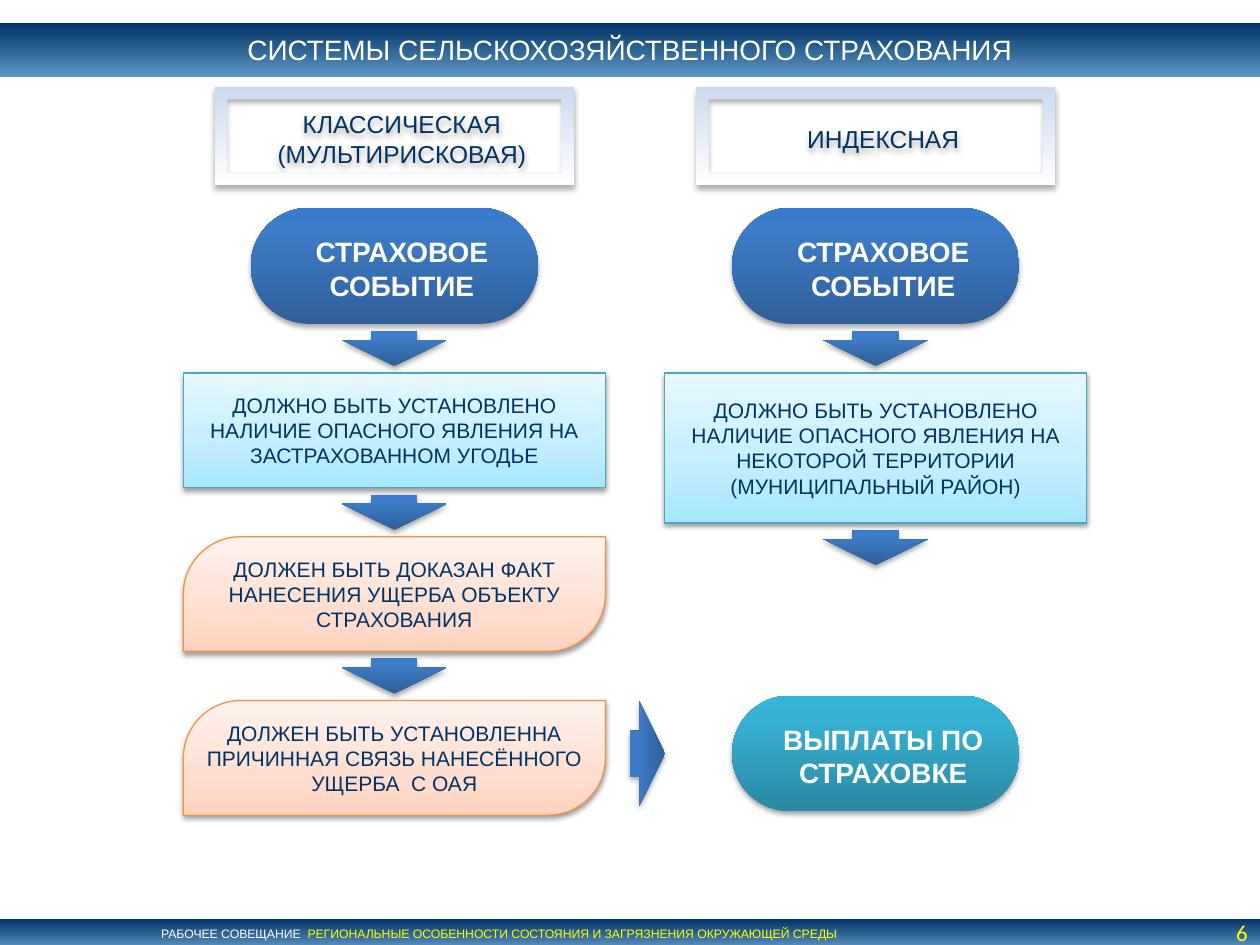
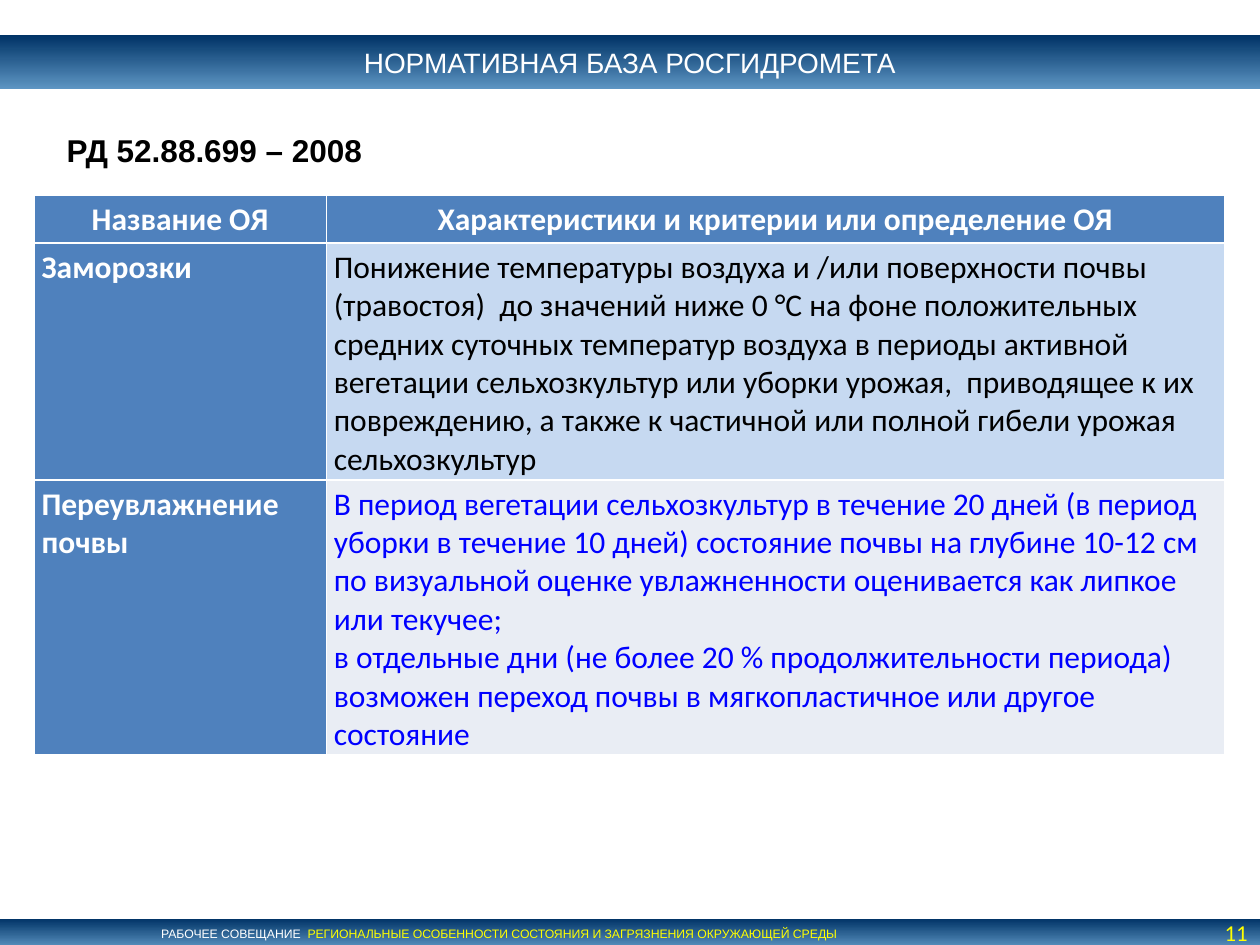
import copy

import pptx
import pptx.dml.color
import pptx.enum.shapes
import pptx.enum.text
import pptx.oxml
import pptx.oxml.ns
import pptx.util

SHAPE = pptx.enum.shapes.MSO_SHAPE
ALIGN = pptx.enum.text.PP_ALIGN
MIDDLE = pptx.enum.text.MSO_ANCHOR.MIDDLE

# The slide is a grid of 100 columns by 75 rows; all lengths are in grid cells.
COLUMNS, ROWS = 100, 75
CELL = pptx.util.Inches(0.1)

COLORS = {
    "navy": "003366", "white": "FFFFFF", "yellow": "FFFF00",
    "black": "000000", "blue": "0000FF", "header": "4F81BD",
    "frost row": "C6D9F1", "wet row": "E9EDF4",
    "hazard line": "46AAC5", "proof line": "F69240",
}
DOWN, UP = 270, 90
# Each gradient: direction, then (position, colour) stops.
GRADIENTS = {
    "band": (DOWN, [(0, "003366"), (100, "5D95C3")]),
    "system": (DOWN, [(0, "CBD9F1"), (100, "FFFFFF")]),
    "event": (UP, [(0, "2F5F99"), (80, "3D7CC7"), (100, "3A7CCB")]),
    "payout": (UP, [(0, "2A88A2"), (80, "37B1D2"), (100, "34B4D6")]),
    "hazard": (UP, [(0, "A7E6FF"), (35, "C1EDFF"), (100, "E7F8FF")]),
    "proof": (UP, [(0, "FFD2BD"), (35, "FFDED0"), (100, "FFF2ED")]),
}
# Shadows: opacity in percent, blur and distance in points.
FRAME_SHADOW, PILL_SHADOW, STEP_SHADOW = (32, 3.5, 2.2), (35, 3.1, 1.8), (38, 3.1, 1.6)

BADGE_INSETS = (1.6, 0.8, 0.4, 0.4)
STEP_INSETS = (0, 0.2, 0, 0.2)

CLASSIC_CENTER, INDEX_CENTER = 31.3, 69.5
SYSTEM_TOP, EVENT_TOP = 6.9, 16.5
SYSTEM_W, SYSTEM_H = 28.5, 7.8
PILL_W, PILL_H = 22.8, 9.2
STEP_W, STEP_H, TALL_STEP_H = 33.5, 9.1, 11.9
ARROW_W, ARROW_H = 8.3, 2.8
LINK = 3.9  # space between steps, with the arrow in its middle
PAYOUT_TOP = 55.2


def grid(*cells):
    return [round(n * CELL) for n in cells]


def rgb(name):
    return pptx.dml.color.RGBColor.from_string(COLORS[name])


def fill_gradient(shape, name):
    direction, stops = GRADIENTS[name]
    shape.fill.gradient()
    shape.fill.gradient_angle = direction
    stop_list = shape._element.spPr.find(".//" + pptx.oxml.ns.qn("a:gsLst"))
    pattern = copy.deepcopy(stop_list[0])
    for old in list(stop_list):
        stop_list.remove(old)
    for _ in stops:
        stop_list.append(copy.deepcopy(pattern))
    for stop, (position, color) in zip(shape.fill.gradient_stops, stops):
        stop.position = position / 100
        stop.color.rgb = pptx.dml.color.RGBColor.from_string(color)


def cast_shadow(shape, opacity, blur, distance):
    """Drop a black shadow straight down."""
    effects = shape._element.spPr.find(pptx.oxml.ns.qn("a:effectLst"))
    effects.append(pptx.oxml.parse_xml(
        f'<a:outerShdw {pptx.oxml.ns.nsdecls("a")} blurRad="{pptx.util.Pt(blur)}" '
        f'dist="{pptx.util.Pt(distance)}" dir="5400000" algn="t" rotWithShape="0">'
        f'<a:srgbClr val="000000"><a:alpha val="{opacity * 1000}"/></a:srgbClr></a:outerShdw>'))


def add_block(slide, kind, box, gradient, adjustments=(), line=None, shadow=None):
    block = slide.shapes.add_shape(kind, *grid(*box))
    block.shadow.inherit = False
    for index, value in enumerate(adjustments):
        block.adjustments[index] = value
    fill_gradient(block, gradient)
    if line:
        block.line.color.rgb = rgb(line)
        block.line.width = pptx.util.Pt(0.75)
    else:
        block.line.fill.background()
    if shadow:
        cast_shadow(block, *shadow)
    return block


def set_insets(holder, insets):
    (holder.margin_left, holder.margin_top,
     holder.margin_right, holder.margin_bottom) = grid(*insets)


def add_run(paragraph, text, size, color, font="Arial", bold=False):
    run = paragraph.add_run()
    run.text = text
    run.font.size = pptx.util.Pt(size)
    run.font.name = font
    run.font.bold = bold
    run.font.color.rgb = rgb(color)


def write(frame, lines, size, color, align=ALIGN.CENTER, **style):
    for index, text in enumerate(lines):
        paragraph = frame.add_paragraph() if index else frame.paragraphs[0]
        paragraph.alignment = align
        add_run(paragraph, text, size, color, **style)


def label(block, lines, size, color, insets, **style):
    frame = block.text_frame
    frame.word_wrap = True
    frame.vertical_anchor = MIDDLE
    set_insets(frame, insets)
    write(frame, lines, size, color, **style)


def add_title(slide, text, top):
    band = add_block(slide, SHAPE.RECTANGLE, (0, top, COLUMNS, 4.3), "band")
    label(band, [text], 16, "white", (2, 0.8, 2, 0.8))


def add_footer(slide, number):
    band = add_block(slide, SHAPE.RECTANGLE, (0, 72.9, COLUMNS, 2.4), "band")
    band.text_frame.vertical_anchor = MIDDLE
    meeting = band.text_frame.paragraphs[0]
    meeting.alignment = ALIGN.LEFT
    meeting._p.get_or_add_pPr().set("marL", str(round(11.8 * CELL)))
    add_run(meeting, "РАБОЧЕЕ СОВЕЩАНИЕ  ", 7, "white")
    add_run(meeting, "РЕГИОНАЛЬНЫЕ ОСОБЕННОСТИ СОСТОЯНИЯ И ЗАГРЯЗНЕНИЯ ОКРУЖАЮЩЕЙ СРЕДЫ",
            7, "yellow")
    page = slide.shapes.add_textbox(*grid(92.1, 72.9, 7.9, 2.2))
    label(page, [str(number)], 13, "yellow", (1, 0, 1, 0),
          align=ALIGN.RIGHT, font="Calibri")


def add_system(slide, center, lines):
    system = add_block(slide, SHAPE.FRAME,
                       (center - SYSTEM_W / 2, SYSTEM_TOP, SYSTEM_W, SYSTEM_H),
                       "system", shadow=FRAME_SHADOW)
    label(system, lines, 14, "navy", BADGE_INSETS)


def add_pill(slide, center, top, text, gradient):
    pill = add_block(slide, SHAPE.ROUND_2_DIAG_RECTANGLE,
                     (center - PILL_W / 2, top, PILL_W, PILL_H),
                     gradient, (0.5, 0.5), shadow=PILL_SHADOW)
    label(pill, [text], 16, "white", BADGE_INSETS, bold=True)


def add_arrow(slide, center, middle, rotation=0):
    arrow = add_block(slide, SHAPE.DOWN_ARROW,
                      (center - ARROW_W / 2, middle - ARROW_H / 2, ARROW_W, ARROW_H),
                      "event", (0.433, 0.735), shadow=PILL_SHADOW)
    arrow.rotation = rotation


def add_step(slide, center, top, height, kind, text):
    corner = 0.5 if kind == "proof" else 0
    step = add_block(slide, SHAPE.ROUND_2_DIAG_RECTANGLE,
                     (center - STEP_W / 2, top, STEP_W, height),
                     kind, (corner, 0), f"{kind} line", STEP_SHADOW)
    label(step, [text], 12, "navy", STEP_INSETS)


def add_flow(slide, center, system, steps):
    """Stack a system, its insured event and the steps; return where the stack ends."""
    add_system(slide, center, system)
    add_pill(slide, center, EVENT_TOP, "СТРАХОВОЕ СОБЫТИЕ", "event")
    bottom = EVENT_TOP + PILL_H
    for height, kind, text in steps:
        add_arrow(slide, center, bottom + LINK / 2)
        add_step(slide, center, bottom + LINK, height, kind, text)
        bottom += LINK + height
    return bottom


def build_insurance_systems(slide):
    add_title(slide, "СИСТЕМЫ СЕЛЬСКОХОЗЯЙСТВЕННОГО СТРАХОВАНИЯ", 1.8)
    add_flow(slide, CLASSIC_CENTER, ["КЛАССИЧЕСКАЯ", "(МУЛЬТИРИСКОВАЯ)"], [
        (STEP_H, "hazard",
         "ДОЛЖНО БЫТЬ УСТАНОВЛЕНО НАЛИЧИЕ ОПАСНОГО ЯВЛЕНИЯ НА ЗАСТРАХОВАННОМ УГОДЬЕ"),
        (STEP_H, "proof",
         "ДОЛЖЕН БЫТЬ ДОКАЗАН ФАКТ НАНЕСЕНИЯ УЩЕРБА ОБЪЕКТУ СТРАХОВАНИЯ"),
        (STEP_H, "proof",
         "ДОЛЖЕН БЫТЬ УСТАНОВЛЕННА ПРИЧИННАЯ СВЯЗЬ НАНЕСЁННОГО УЩЕРБА  С ОАЯ"),
    ])
    index_bottom = add_flow(slide, INDEX_CENTER, ["ИНДЕКСНАЯ"], [
        (TALL_STEP_H, "hazard",
         "ДОЛЖНО БЫТЬ УСТАНОВЛЕНО НАЛИЧИЕ ОПАСНОГО ЯВЛЕНИЯ НА НЕКОТОРОЙ ТЕРРИТОРИИ "
         "(МУНИЦИПАЛЬНЫЙ РАЙОН)"),
    ])
    add_arrow(slide, INDEX_CENTER, index_bottom + LINK / 2)
    add_arrow(slide, 51.4, PAYOUT_TOP + PILL_H / 2, rotation=270)
    add_pill(slide, INDEX_CENTER, PAYOUT_TOP, "ВЫПЛАТЫ ПО СТРАХОВКЕ", "payout")


def fill_cell(cell, lines, fill, color="white", align=ALIGN.LEFT, bold=True):
    cell.fill.solid()
    cell.fill.fore_color.rgb = rgb(fill)
    set_insets(cell, (0.6, 0.4, 0.6, 0.4))
    write(cell.text_frame, lines, 18, color, align, font="Calibri", bold=bold)


def add_hazard_table(slide, headings, hazards):
    widths, heights = (23.2, 71.3), (3.8, 18.8, 21.7)
    table = slide.shapes.add_table(
        len(heights), len(widths), *grid(2.7, 15.5, sum(widths), sum(heights))).table
    for column, width in zip(table.columns, grid(*widths)):
        column.width = width
    for row, height in zip(table.rows, grid(*heights)):
        row.height = height
    for index, heading in enumerate(headings):
        fill_cell(table.cell(0, index), [heading], "header", align=ALIGN.CENTER)
    for index, (hazard, criteria, fill, color) in enumerate(hazards, 1):
        fill_cell(table.cell(index, 0), [hazard], "header")
        fill_cell(table.cell(index, 1), criteria, fill, color, bold=False)


def build_regulations(slide):
    add_title(slide, "НОРМАТИВНАЯ БАЗА РОСГИДРОМЕТА", 2.8)
    document = slide.shapes.add_textbox(*grid(4.3, 9.9, 25.7, 4))
    write(document.text_frame, ["РД 52.88.699 – 2008"], 18, "black", ALIGN.LEFT, bold=True)
    add_hazard_table(slide, ["Название ОЯ", "Характеристики и критерии или определение ОЯ"], [
        ("Заморозки",
         ["Понижение температуры воздуха и /или поверхности почвы (травостоя)  до значений "
          "ниже 0 °С на фоне положительных средних суточных температур воздуха в периоды "
          "активной вегетации сельхозкультур или уборки урожая,  приводящее к их "
          "повреждению, а также к частичной или полной гибели урожая сельхозкультур"],
         "frost row", "black"),
        ("Переувлажнение почвы",
         ["В период вегетации сельхозкультур в течение 20 дней (в период уборки в течение "
          "10 дней) состояние почвы на глубине 10-12 см по визуальной оценке увлажненности "
          "оценивается как липкое или текучее;",
          "в отдельные дни (не более 20 % продолжительности периода) возможен переход почвы "
          "в мягкопластичное или другое состояние"],
         "wet row", "blue"),
    ])


def main():
    deck = pptx.Presentation()
    deck.slide_width, deck.slide_height = grid(COLUMNS, ROWS)
    blank = deck.slide_layouts[6]
    for number, build in ((6, build_insurance_systems), (11, build_regulations)):
        slide = deck.slides.add_slide(blank)
        add_footer(slide, number)
        build(slide)
    deck.save("out.pptx")


if __name__ == "__main__":
    main()
